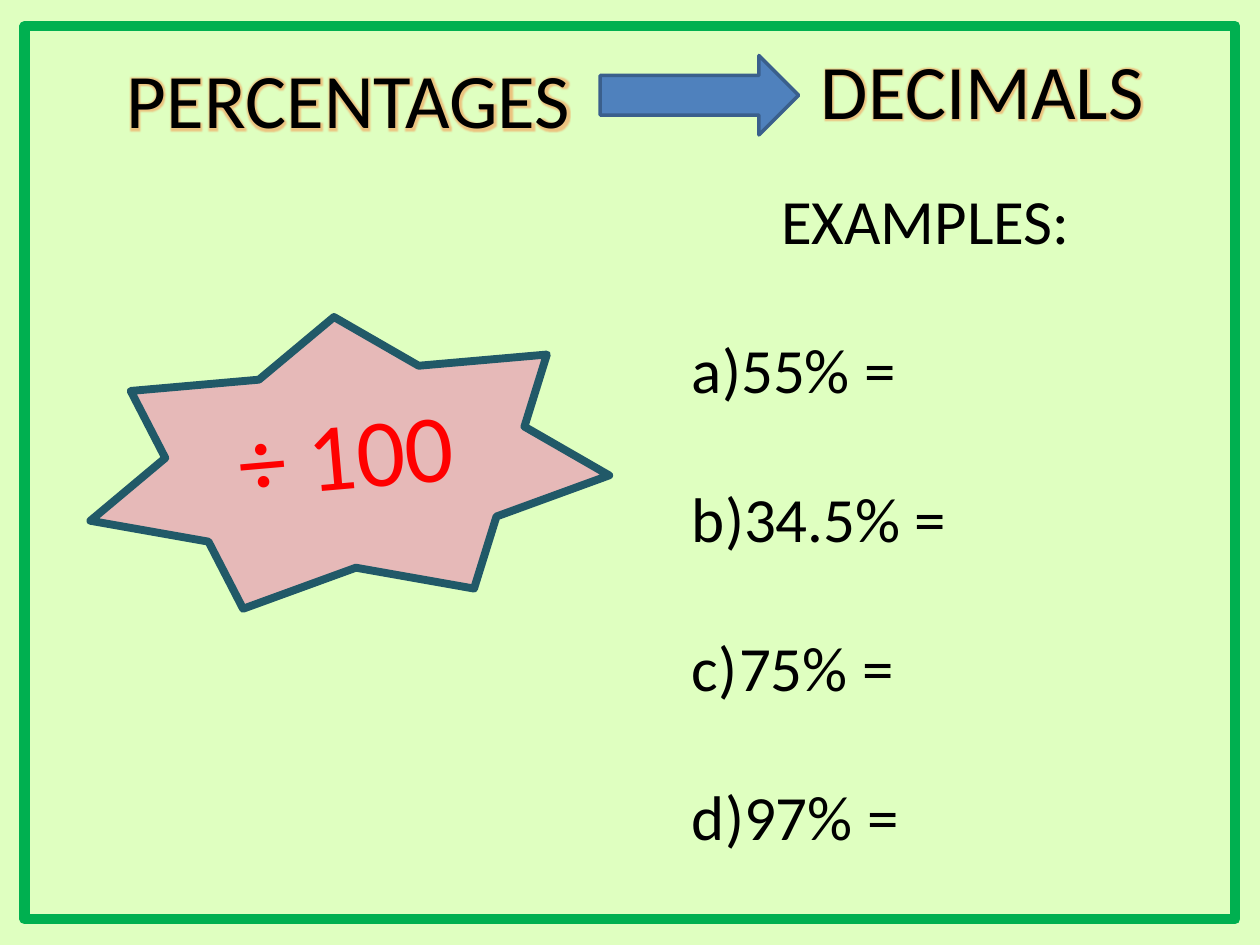
from lxml.etree import SubElement
from pptx import Presentation
from pptx.dml.color import RGBColor
from pptx.enum.shapes import MSO_SHAPE
from pptx.enum.text import MSO_ANCHOR, PP_ALIGN
from pptx.oxml import parse_xml
from pptx.oxml.ns import nsdecls, qn
from pptx.util import Cm, Pt

BACKGROUND = RGBColor(0xDF, 0xFF, 0xC0)
GREEN = RGBColor(0x00, 0xB0, 0x50)
BLUE = RGBColor(0x4F, 0x81, 0xBD)
DARK_BLUE = RGBColor(0x3A, 0x5F, 0x8C)
PINK = RGBColor(0xE6, 0xB9, 0xB8)
TEAL = RGBColor(0x21, 0x59, 0x68)
RED = RGBColor(0xFF, 0x00, 0x00)
BLACK = RGBColor(0x00, 0x00, 0x00)
GLOW = RGBColor(0xFF, 0x6A, 0x20)

EXAMPLES = ["55% =", "34.5% =", "75% =", "97% ="]


def add_run(p, text, size, color=BLACK):
    """Add a coloured Calibri run to a paragraph."""
    r = p.add_run()
    r.text = text
    r.font.color.rgb = color
    for name, value in {"name": "Calibri", "size": Pt(size)}.items():
        setattr(r.font, name, value)
    return r


def add_outlined(s, kind, box, line, width, fill=None):
    """Add a preset shape with an outline and an optional fill."""
    sp = s.shapes.add_shape(kind, *map(Cm, box))
    sp.shadow.inherit = False
    if fill is None:
        sp.fill.background()
    else:
        sp.fill.solid()
        sp.fill.fore_color.rgb = fill
    sp.line.color.rgb = line
    sp.line.width = Pt(width)
    return sp


def add_textbox(s, box, wrap=True):
    """Add an empty text box and return its text frame."""
    tf = s.shapes.add_textbox(*map(Cm, box)).text_frame
    tf.word_wrap = wrap
    return tf


def add_glow(r):
    """Give a run a soft orange glow."""
    glow = parse_xml(
        f'<a:effectLst {nsdecls("a")}><a:glow rad="45500">'
        f'<a:srgbClr val="{GLOW}"><a:alpha val="40000"/></a:srgbClr>'
        '</a:glow></a:effectLst>'
    )
    r.font.fill._xPr.find(qn("a:solidFill")).addnext(glow)


def add_heading(s, text, box, wrap):
    """Add a glowing heading."""
    tf = add_textbox(s, box, wrap)
    add_glow(add_run(tf.paragraphs[0], text, 44))


def add_examples(s, box):
    """Add the examples title and its lettered list."""
    tf = add_textbox(s, box)
    p = tf.paragraphs[0]
    p.alignment = PP_ALIGN.CENTER
    add_run(p, "EXAMPLES: ", 36)
    for text in EXAMPLES:
        p = tf.add_paragraph()
        p.space_before = Pt(42)
        add_run(p, text, 36)
        pPr = p._p.get_or_add_pPr()
        for name, value in {"marL": Cm(0.95), "indent": -Cm(0.95)}.items():
            pPr.set(name, str(int(value)))
        SubElement(pPr, qn("a:buFont")).set("typeface", "+mj-lt")
        SubElement(pPr, qn("a:buAutoNum")).set("type", "alphaLcParenR")


def add_star(s, text, box):
    """Add the tilted star that holds the rule."""
    sp = add_outlined(s, MSO_SHAPE.STAR_7_POINT, box, TEAL, 4.5, PINK)
    sp.rotation = 355
    tf = sp.text_frame
    tf.vertical_anchor = MSO_ANCHOR.MIDDLE
    p = tf.paragraphs[0]
    p.alignment = PP_ALIGN.CENTER
    add_run(p, text, 55, RED)


def main():
    """Build the slide and save it."""
    prs = Presentation()
    for name, value in {"slide_width": 25.4, "slide_height": 19.05}.items():
        setattr(prs, name, Cm(value))
    s = prs.slides.add_slide(prs.slide_layouts[6])
    s.background.fill.solid()
    s.background.fill.fore_color.rgb = BACKGROUND
    add_outlined(s, MSO_SHAPE.RECTANGLE, (0.5, 0.53, 24.4, 18), GREEN, 6)
    add_heading(s, "PERCENTAGES", (2.31, 0.92, 9.55, 2.14), False)
    add_outlined(s, MSO_SHAPE.RIGHT_ARROW, (12.1, 1.12, 4, 1.6),
                 DARK_BLUE, 2, BLUE)
    add_heading(s, "DECIMALS", (16.3, 0.73, 8.4, 2.14), True)
    add_star(s, "÷ 100", (1.73, 6.38, 10.5, 5.7))
    add_examples(s, (13.7, 3.53, 10.2, 14.1))
    prs.save("out.pptx")


if __name__ == "__main__":
    main()
